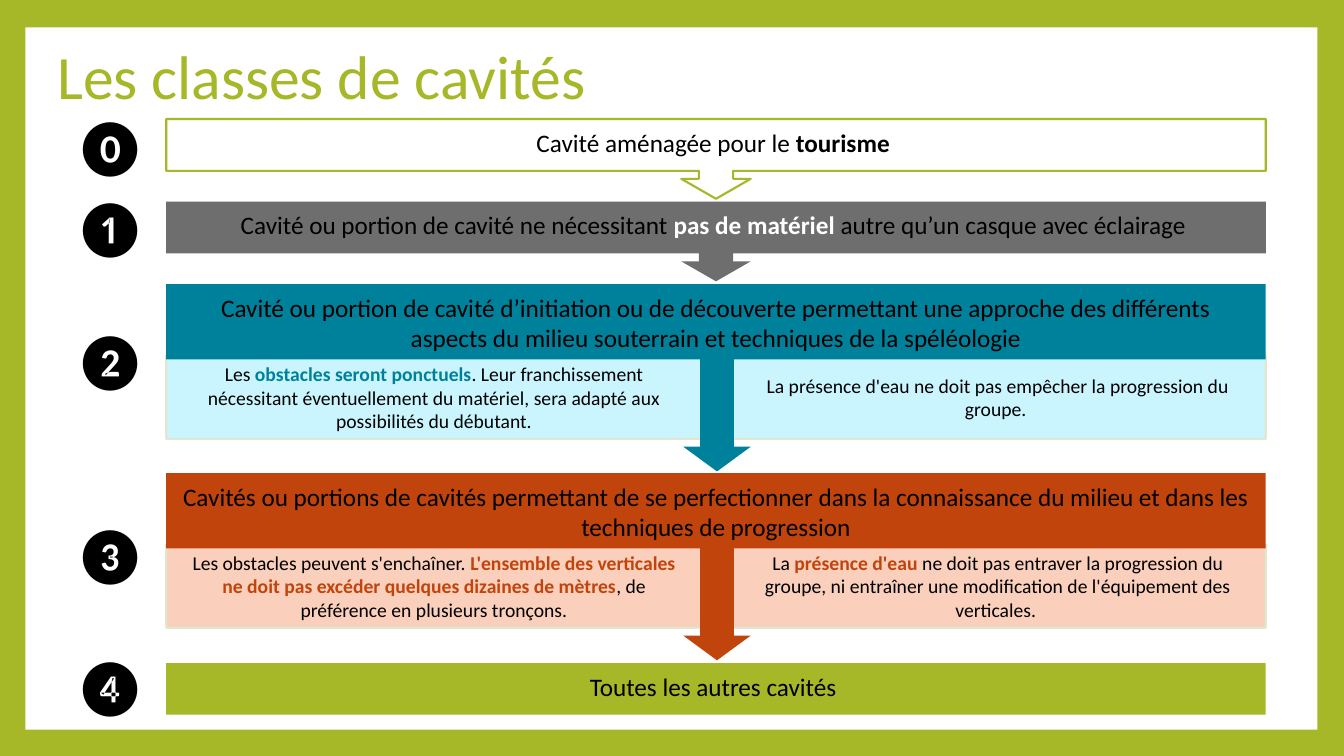
from lxml import etree
from pptx import Presentation
from pptx.dml.color import RGBColor
from pptx.enum import shapes, text
from pptx.oxml.ns import qn
from pptx.util import Cm, Pt

LIME, GREY, TEAL, RUST = "A6B727", "6E6E6E", "00819B", "C1440C"
KIND = shapes.MSO_SHAPE
LEFT, WIDE, HALF = 4.19, 27.71, 13.5

prs = Presentation()
prs.slide_width, prs.slide_height = Cm(33.87), Cm(19.05)
slide = prs.slides.add_slide(prs.slide_layouts[5])
back = slide.background.fill
back.solid()
back.fore_color.rgb = RGBColor.from_string(LIME)


def write(shape, words, size=18, accent="000000", color="000000", align="CENTER",
          anchor="TOP", pads=(0.41, 0.2, 0.41, 0.2), wrap=True, spacing=None):
    """Fill a shape with text; parts between asterisks are bold in the accent colour."""
    frame = shape.text_frame
    frame.auto_size = text.MSO_AUTO_SIZE.NONE
    frame.word_wrap = wrap
    frame.vertical_anchor = text.MSO_ANCHOR[anchor]
    (frame.margin_left, frame.margin_top,
     frame.margin_right, frame.margin_bottom) = [Cm(p) for p in pads]
    para = frame.paragraphs[0]
    para.alignment = text.PP_ALIGN[align]
    para.line_spacing = spacing
    for i, part in enumerate(words.split("*")):
        if part:
            run = para.add_run()
            run.text = part
            run.font.name, run.font.size = "Calibri", Pt(size)
            run.font.bold = i % 2 == 1
            run.font.color.rgb = RGBColor.from_string(accent if i % 2 else color)


def draw(kind, box, fill=None, line=None, alpha=None, adjust=()):
    shape = slide.shapes.add_shape(kind, *[Cm(n) for n in box])
    shape.shadow.inherit = False
    for i, value in enumerate(adjust):
        shape.adjustments[i] = value
    for paint, color in ((shape.fill, fill), (shape.line.fill, line)):
        if color:
            paint.solid()
            paint.fore_color.rgb = RGBColor.from_string(color)
        else:
            paint.background()
    if line:
        shape.line.width = Pt(1.5)
    if alpha:
        for tint in shape._element.spPr.iter(qn("a:srgbClr")):
            etree.SubElement(tint, qn("a:alpha")).set("val", str(alpha * 1000))
    return shape


panel = draw(KIND.RECTANGLE, (0.64, 0.69, 32.56, 17.7), "FFFFFF")
slide.shapes._spTree.insert(2, panel._element)

title = slide.shapes.title
title.left, title.top, title.width, title.height = Cm(1.19), Cm(1.02), Cm(31.6), Cm(1.98)
write(title, "Les classes de cavités", size=44, color=LIME, align="LEFT",
      anchor="MIDDLE", pads=(0.25, 0.13, 0.25, 0.13), spacing=0.9)

for sign, top in zip("⓿❶❷❸❹", (2.69, 4.72, 8.08, 12.95, 16.28)):
    mark = slide.shapes.add_textbox(Cm(1.6), Cm(top), Cm(1.88), Cm(1.96))
    write(mark, sign, size=40, align="LEFT", pads=(0.25, 0.13, 0.25, 0.13), wrap=False)

# Classes 0 and 1: boxes that point to the next class
callouts = [
    (3.0, None, LIME, "000000", "Cavité aménagée pour le *tourisme *"),
    (5.08, GREY, None, "FFFFFF", "Cavité ou portion de cavité ne nécessitant *pas de matériel*"
     " autre qu’un casque avec éclairage "),
]
for top, fill, line, accent, words in callouts:
    box = draw(KIND.DOWN_ARROW_CALLOUT, (LEFT, top, WIDE, 2.01), fill, line,
               adjust=(0.43, 0.435, 0.25, 0.65))
    write(box, words, accent=accent, pads=(0.41, 0.2, 0.41, 0))

# Classes 2 and 3: header, two details and an arrow
classes = [
    (7.16, TEAL, "C5F5FF",
     "Cavité ou portion de cavité d’initiation ou de découverte permettant une approche"
     " des différents aspects du milieu souterrain et techniques de la spéléologie",
     ("Les *obstacles seront ponctuels*. Leur franchissement nécessitant éventuellement"
      " du matériel, sera adapté aux possibilités du débutant.",
      "La présence d'eau ne doit pas empêcher la progression du groupe. ")),
    (11.92, RUST, "FACAB4",
     "Cavités ou portions de cavités permettant de se perfectionner dans la connaissance"
     " du milieu et dans les techniques de progression",
     ("Les obstacles peuvent s'enchaîner. *L'ensemble des verticales ne doit pas excéder"
      " quelques dizaines de mètres*, de préférence en plusieurs tronçons.",
      "La *présence d'eau *ne doit pas entraver la progression du groupe, ni entraîner"
      " une modification de l'équipement des verticales. ")),
]
for top, color, pale, head, details in classes:
    for left, words in zip((LEFT, LEFT + WIDE - HALF), details):
        box = draw(KIND.RECTANGLE, (left, top + 1.8, HALF, 2.1), pale, "E1E6CD", alpha=90)
        write(box, words, size=14, accent=color, anchor="MIDDLE",
              pads=(0.41, 0.08, 0.41, 0.08))
    write(draw(KIND.RECTANGLE, (LEFT, top, WIDE, 1.9), color), head)
    draw(KIND.DOWN_ARROW, (17.22, top + 1.8, 1.7, 2.92), color, adjust=(0.5, 0.366))

last = draw(KIND.RECTANGLE, (LEFT, 16.71, WIDE, 1.3), LIME)
write(last, "Toutes les autres cavités ")

prs.save("out.pptx")
